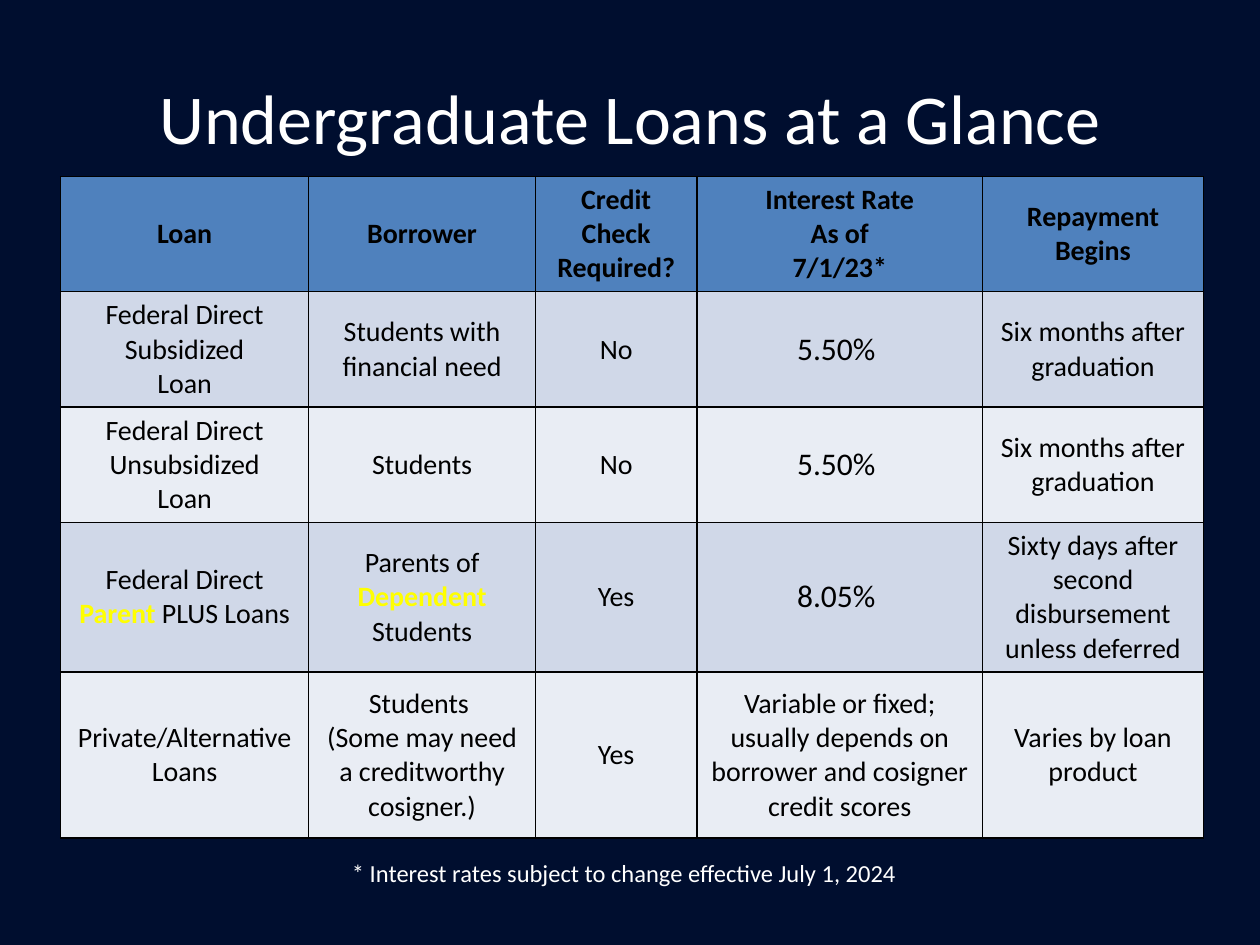
from lxml import etree
from pptx import Presentation
from pptx import util as u
from pptx.dml.color import RGBColor
from pptx.enum import text
from pptx.oxml.ns import qn

NAVY = RGBColor(0x00, 0x0E, 0x2F)
WHITE = RGBColor(0xFF, 0xFF, 0xFF)
BLACK = RGBColor(0x00, 0x00, 0x00)
YELLOW = RGBColor(0xFF, 0xFF, 0x00)
HEADER_BLUE = RGBColor(0x4F, 0x81, 0xBD)
BANDS = (RGBColor(0xD0, 0xD8, 0xE8), RGBColor(0xE9, 0xED, 0xF4))

COLUMN_WIDTHS = (141.8, 129.6, 92.2, 163.4, 126)
ROW_HEIGHTS = (63.4, 63.4, 63.4, 82, 95)

# A cell is a list of lines; a line is a list of runs; *marked* runs are highlighted
HEADINGS = [
    [["Loan"]],
    [["Borrower"]],
    [["Credit Check Required?"]],
    [["Interest Rate"], ["As of"], ["7/1/23*"]],
    [["Repayment Begins"]],
]
LOANS = [
    [[["Federal Direct Subsidized"], ["Loan"]],
     [["Students with financial need"]],
     [["No"]], [["5.50% "]],
     [["Six months after graduation"]]],
    [[["Federal Direct Unsubsidized"], ["Loan"]],
     [["Students"]],
     [["No"]], [["5.50% "]],
     [["Six months after graduation"]]],
    [[["Federal Direct ", "*Parent*", " PLUS Loans"]],
     [["Parents of ", "*Dependent*", " Students"]],
     [["Yes"]], [["8.05% "]],
     [["Sixty days after second disbursement unless deferred"]]],
    [[["Private/Alternative Loans"]],
     [["Students "], ["(Some may need a creditworthy cosigner.)"]],
     [["Yes"]],
     [["Variable or fixed; usually depends on borrower and cosigner credit scores"]],
     [["Varies by loan product"]]],
]


class LoanSlide:
    font = "Calibri"
    body_size = 16
    rate_size = 18

    def __init__(self, deck):
        self.slide = deck.slides.add_slide(deck.slide_layouts[5])
        background = self.slide.background.fill
        background.solid()
        background.fore_color.rgb = NAVY

    def add_lines(self, frame, lines, size, color, bold=False):
        frame.word_wrap = True
        for number, runs in enumerate(lines):
            line = frame.add_paragraph() if number else frame.paragraphs[0]
            line.alignment = text.PP_ALIGN.CENTER
            for words in runs:
                marked = words.startswith("*") and words.endswith("*")
                run = line.add_run()
                run.text = words.strip("*") if marked else words
                run.font.name = self.font
                run.font.size = u.Pt(size)
                run.font.bold = bold or marked
                run.font.color.rgb = YELLOW if marked else color

    def title(self, words, left, top, width, height):
        title = self.slide.shapes.title
        title.left, title.top = u.Pt(left), u.Pt(top)
        title.width, title.height = u.Pt(width), u.Pt(height)
        title.text_frame.vertical_anchor = text.MSO_ANCHOR.MIDDLE
        self.add_lines(title.text_frame, [[words]], 40, WHITE)

    def note(self, words, left, top, width, height):
        note = self.slide.shapes.add_textbox(
            u.Pt(left), u.Pt(top), u.Pt(width), u.Pt(height))
        note.text_frame.auto_size = text.MSO_AUTO_SIZE.SHAPE_TO_FIT_TEXT
        self.add_lines(note.text_frame, [[words]], 14, WHITE)

    def border(self, cell):
        properties = cell._tc.get_or_add_tcPr()
        for side in ("a:lnL", "a:lnR", "a:lnT", "a:lnB"):
            line = etree.SubElement(properties, qn(side), w=str(u.Pt(1)))
            fill = etree.SubElement(line, qn("a:solidFill"))
            etree.SubElement(fill, qn("a:srgbClr"), val=str(BLACK))

    def cell(self, cell, lines, fill, size, bold):
        self.border(cell)
        cell.fill.solid()
        cell.fill.fore_color.rgb = fill
        cell.vertical_anchor = text.MSO_ANCHOR.MIDDLE
        self.add_lines(cell.text_frame, lines, size, BLACK, bold)

    def table(self, rows, left, top):
        table = self.slide.shapes.add_table(
            len(rows), len(COLUMN_WIDTHS), u.Pt(left), u.Pt(top),
            u.Pt(sum(COLUMN_WIDTHS)), u.Pt(sum(ROW_HEIGHTS))).table
        for column, width in zip(table.columns, COLUMN_WIDTHS):
            column.width = u.Pt(width)
        for r, (row, height) in enumerate(zip(rows, ROW_HEIGHTS)):
            table.rows[r].height = u.Pt(height)
            fill = BANDS[(r - 1) % 2] if r else HEADER_BLUE
            for c, lines in enumerate(row):
                is_rate = "%" in lines[0][0]
                size = self.rate_size if is_rate else self.body_size
                self.cell(table.cell(r, c), lines, fill, size, bold=r == 0)


def main():
    deck = Presentation()
    deck.slide_width, deck.slide_height = u.Pt(720), u.Pt(540)
    loans = LoanSlide(deck)

    # Heading
    loans.title("Undergraduate Loans at a Glance", 36, 21.6, 648, 90)
    # Loan comparison
    loans.table([HEADINGS] + LOANS, 34.6, 100.8)
    # Footnote to the interest rates
    loans.note("* Interest rates subject to change effective July 1, 2024",
               170.6, 486.7, 372.2, 24.5)

    deck.save("out.pptx")


if __name__ == "__main__":
    main()
